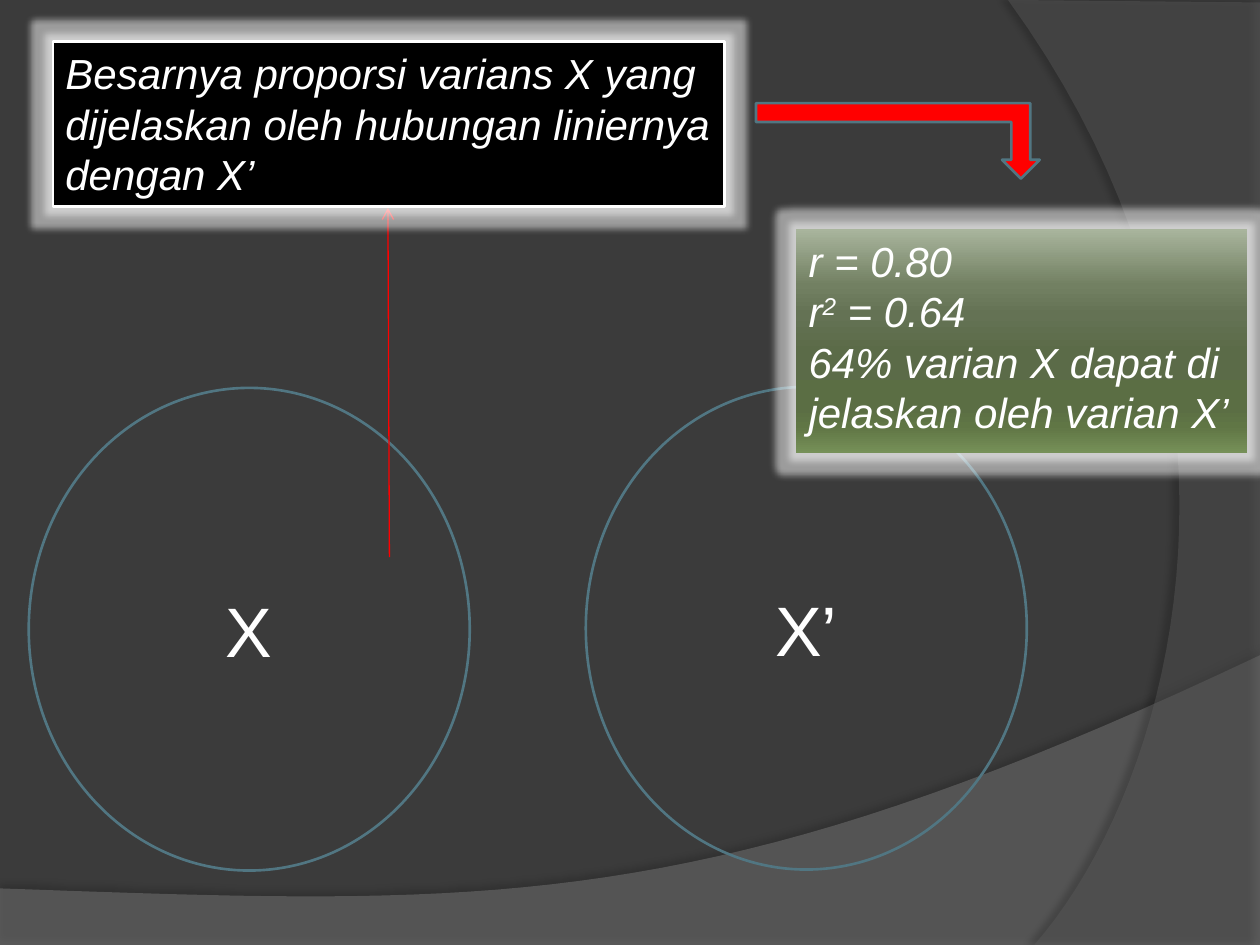
import pptx
import pptx.util
from lxml import etree
from pptx.dml.color import RGBColor
from pptx.enum.shapes import MSO_CONNECTOR, MSO_SHAPE
from pptx.enum.text import MSO_ANCHOR, MSO_AUTO_SIZE, PP_ALIGN
from pptx.oxml import parse_xml
from pptx.oxml.ns import nsdecls, qn

Cm, Pt = pptx.util.Cm, pptx.util.Pt
COLORS = {"bg": "3B3B3B", "floor": "7F7F7F", "side": "5E5E5E", "line": "517682",
          "red": "FF0000", "white": "FFFFFF", "black": "000000"}
RGB = {name: RGBColor.from_string(c) for name, c in COLORS.items()}


def style(sp, fill=None, line=None, effect=None):
    sp.shadow.inherit = False
    if fill:
        sp.fill.solid()
        sp.fill.fore_color.rgb = RGB[fill]
    else:
        sp.fill.background()
    if line:
        sp.line.color.rgb = RGB[line]
        sp.line.width = Pt(1.5)
    else:
        sp.line.fill.background()
    if effect:
        tag, attrs, color, alpha = effect
        sp._element.spPr.find(qn("a:effectLst")).append(parse_xml(
            f'<a:{tag} {nsdecls("a")} {attrs}><a:srgbClr val="{COLORS[color]}">'
            f'<a:alpha val="{alpha}000"/></a:srgbClr></a:{tag}>'))


def write(sp, lines, size, italic=False, align=PP_ALIGN.LEFT):
    tf = sp.text_frame
    tf.word_wrap = True
    for i, runs in enumerate(lines):
        p = tf.paragraphs[0] if i == 0 else tf.add_paragraph()
        p.alignment = align
        p.font.size = Pt(size)
        p.font.name = "Arial"
        p.font.italic = italic
        p.font.color.rgb = RGB["white"]
        for text in runs:
            r = p.add_run()
            r.text = text
            if text == "2":  # exponent
                r.font._element.set("baseline", "30000")
    return tf


prs = pptx.Presentation()
prs.slide_width, prs.slide_height = Cm(25.4), Cm(19.05)
s = prs.slides.add_slide(prs.slide_layouts[6])
s.background.fill.solid()
s.background.fill.fore_color.rgb = RGB["bg"]

# Background waves: straight corners, then one Bezier curve from the last corner
STEPS = 40
waves = [
    ("floor", 45, 'blurRad="50800" dist="44450" dir="16200000"', 35,
     [(0, 17.91), (0, 19.05), (25.4, 19.05), (25.4, 13.21)],
     [(14.2, 18.52), (9.93, 18.26), (0, 17.91)]),
    ("side", 40, 'blurRad="50800" dist="50800" dir="10800000"', 45,
     [(25.4, 0.05), (25.4, 19.05), (20.85, 19.05)],
     [(23.75, 15.72), (25.86, 7.62), (20.32, 0)]),
]
for color, alpha, shadow, shadow_alpha, corners, controls in waves:
    bezier = [corners[-1]] + controls
    curve = []
    for i in range(1, STEPS + 1):
        t = i / STEPS
        weights = ((1 - t)**3, 3 * t * (1 - t)**2, 3 * t * t * (1 - t), t**3)
        curve.append(tuple(sum(w * pt[k] for w, pt in zip(weights, bezier)) for k in (0, 1)))
    points = [(Cm(x), Cm(y)) for x, y in corners + curve]
    fb = s.shapes.build_freeform(*points[0])
    fb.add_line_segments(points[1:], close=True)
    sp = fb.convert_to_shape()
    style(sp, color, effect=("outerShdw", shadow, "black", shadow_alpha))
    clr = sp._element.spPr.find(qn("a:solidFill"))[0]
    etree.SubElement(clr, qn("a:alpha")).set("val", f"{alpha}000")

# Variance circles
for x, y, label in [(0.58, 7.82, "X"), (11.81, 7.8, "X’")]:
    sp = s.shapes.add_shape(MSO_SHAPE.OVAL, Cm(x), Cm(y), Cm(8.89), Cm(9.73))
    style(sp, line="line")
    tf = write(sp, [[label]], 40, align=PP_ALIGN.CENTER)
    tf.vertical_anchor = MSO_ANCHOR.MIDDLE

# Thin arrow from circle X to its explanation
cxn = s.shapes.add_connector(MSO_CONNECTOR.STRAIGHT, Cm(7.85), Cm(11.23), Cm(7.82), Cm(4.19))
cxn.line.color.rgb = RGB["red"]
cxn.line.width = Pt(0.75)
etree.SubElement(cxn.line._get_or_add_ln(), qn("a:tailEnd")).set("type", "arrow")
etree.SubElement(cxn._element.spPr, qn("a:effectLst"))

# Glowing text boxes
glow = ("glow", 'rad="101600"', "white", 50)
boxes = [
    ((1.07, 0.84, 13.54, 3.33), "white",
     [["Besarnya proporsi varians X yang dijelaskan oleh hubungan liniernya dengan X’"]]),
    ((16.05, 4.62, 9.09, 4.52), None,
     [["r = 0.80"], ["r", "2", " = 0.64"], ["64% varian X dapat di jelaskan oleh varian X’"]]),
]
for box, line, lines in boxes:
    sp = s.shapes.add_shape(MSO_SHAPE.RECTANGLE, *map(Cm, box))
    style(sp, "black", line, glow)
    tf = write(sp, lines, 24, italic=True)
    tf.vertical_anchor = MSO_ANCHOR.TOP
    tf.auto_size = MSO_AUTO_SIZE.SHAPE_TO_FIT_TEXT

# Green gradient of the result box
stops = [(0, "A9B59D"), (25, "728062"), (38, "647254"), (55, "5B6B48"),
         (80, "5B6E44"), (88, "607645"), (100, "769058")]
sp.fill.gradient()
sp.fill.gradient_angle = 270
gs_list = sp._element.spPr.find(qn("a:gradFill")).find(qn("a:gsLst"))
for gs in list(gs_list):
    gs_list.remove(gs)
for pos, color in stops:
    gs = etree.SubElement(gs_list, qn("a:gs"), pos=f"{pos}000")
    etree.SubElement(gs, qn("a:srgbClr"), val=color)

# Bent arrow pointing down to the result
sp = s.shapes.add_shape(MSO_SHAPE.BENT_UP_ARROW, Cm(15.24), Cm(2.08), Cm(5.72), Cm(1.52))
style(sp, "red", "line")
sp.rotation = 180
sp._element.spPr.find(qn("a:xfrm")).set("flipH", "1")

prs.save("out.pptx")
